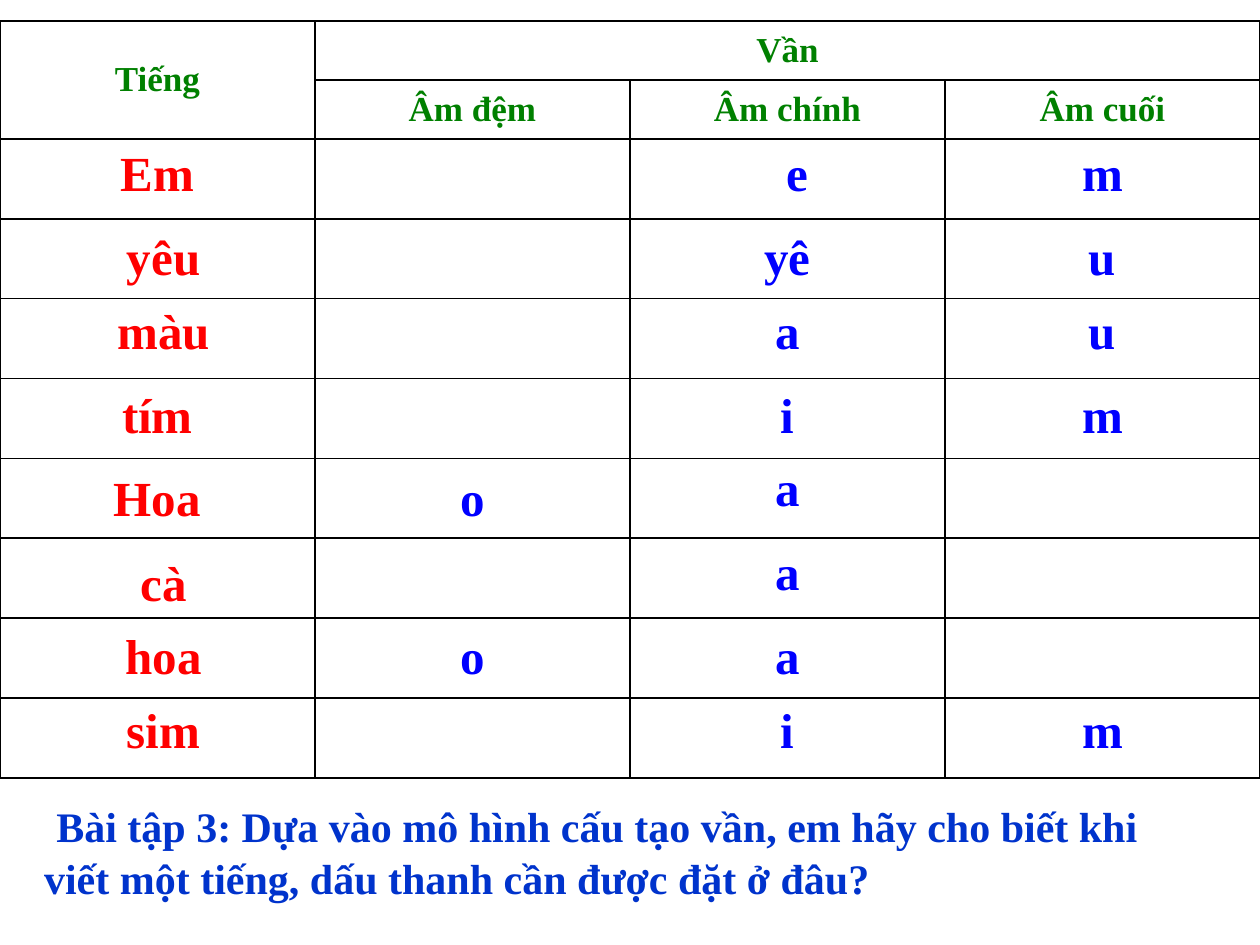
import pptx
import pptx.dml.color
import pptx.enum.text
import pptx.oxml
import pptx.oxml.ns
import pptx.util
from pptx.util import Cm

FONT = "Times New Roman"
GREEN, RED, BLUE, NAVY, BLACK = "008000", "FF0000", "0000FF", "0033CC", "000000"
COLUMN_WIDTH = 6.35
TABLE_TOP = 0.42
HEADER_HEIGHT, ROW_HEIGHT = 1.19, 1.61
SYLLABLE_TOPS = (2.75, 4.45, 5.93, 7.62, 9.31, 11.01, 12.49, 13.97)
VOWEL_TOPS = (2.75, 4.45, 5.93, 7.62, 9.1, 10.8, 12.49, 13.97)
HEADINGS = {(0, 0): "Tiếng", (0, 1): "Vần", (1, 1): "Âm đệm",
            (1, 2): "Âm chính", (1, 3): "Âm cuối"}
SYLLABLES = (" Em ", " yêu", " màu", "tím", "Hoa", " cà", " hoa", " sim")
GLIDES = ("", "", "", "", "o", "", "o", "")
VOWELS = ("e", "yê", "a", "i", "a", "a", "a", "i")
ENDINGS = ("m", "u", "u", "m", "", "", "", "m")
QUESTION = ("Bài tập 3: Dựa vào mô hình cấu tạo vần, em hãy cho biết khi "
            "viết một tiếng, dấu thanh cần được đặt ở đâu?")


def color(value):
    """Return the colour for a hex string."""
    return pptx.dml.color.RGBColor.from_string(value)


def style_font(font, size, value):
    """Set the shared bold face with a size and a colour."""
    font.name = FONT
    font.size = pptx.util.Pt(size)
    font.bold = True
    font.color.rgb = color(value)


def format_cell(cell):
    """Clear the fill of a cell and draw thin black borders round it."""
    properties = cell._tc.get_or_add_tcPr()
    for side in ("lnL", "lnR", "lnT", "lnB"):
        properties.append(pptx.oxml.parse_xml(
            f'<a:{side} {pptx.oxml.ns.nsdecls("a")} w="12700"><a:solidFill>'
            f'<a:srgbClr val="{BLACK}"/></a:solidFill></a:{side}>'))
    cell.fill.background()


def add_rhyme_table(slide):
    """Add the empty grid with its merged heading cells."""
    height = 2 * HEADER_HEIGHT + len(SYLLABLES) * ROW_HEIGHT
    table = slide.shapes.add_table(
        len(SYLLABLES) + 2, 4, Cm(0), Cm(TABLE_TOP),
        Cm(4 * COLUMN_WIDTH), Cm(height)).table
    table.first_row = table.horz_banding = False
    for column in table.columns:
        column.width = Cm(COLUMN_WIDTH)
    for index, row in enumerate(table.rows):
        row.height = Cm(HEADER_HEIGHT if index < 2 else ROW_HEIGHT)
        for cell in row.cells:
            format_cell(cell)
    table.cell(0, 0).merge(table.cell(1, 0))
    table.cell(0, 1).merge(table.cell(0, 3))
    for position, text in HEADINGS.items():
        cell = table.cell(*position)
        cell.text = text
        cell.vertical_anchor = pptx.enum.text.MSO_ANCHOR.MIDDLE
        paragraph = cell.text_frame.paragraphs[0]
        paragraph.alignment = pptx.enum.text.PP_ALIGN.CENTER
        style_font(paragraph.font, 20, GREEN)


def add_text_box(slide, left, top, width, height, space_before):
    """Add a wrapping text box and return its paragraph."""
    frame = slide.shapes.add_textbox(
        Cm(left), Cm(top), Cm(width), Cm(height)).text_frame
    frame.word_wrap = True
    paragraph = frame.paragraphs[0]
    paragraph.space_before = pptx.util.Pt(space_before)
    return paragraph


def add_answers(slide, left, tops, answers, value):
    """Add one column of centred answers, skipping empty ones."""
    for top, answer in zip(tops, answers):
        if answer:
            paragraph = add_text_box(slide, left, top, COLUMN_WIDTH, 1.65, 3.6)
            paragraph.alignment = pptx.enum.text.PP_ALIGN.CENTER
            paragraph.add_run().text = answer
            style_font(paragraph.font, 28, value)


def add_question(slide):
    """Add the exercise question below the table."""
    paragraph = add_text_box(slide, 0.64, 15.88, 23.06, 2.49, 9)
    for text, size in ((" ", 28), (QUESTION, 24)):
        run = paragraph.add_run()
        run.text = text
        style_font(run.font, size, NAVY)


def main():
    """Build and save the slide."""
    presentation = pptx.Presentation()
    presentation.slide_width, presentation.slide_height = Cm(25.4), Cm(19.05)
    slide = presentation.slides.add_slide(presentation.slide_layouts[6])
    add_rhyme_table(slide)
    add_answers(slide, 0, SYLLABLE_TOPS, SYLLABLES, RED)
    add_answers(slide, COLUMN_WIDTH, SYLLABLE_TOPS, GLIDES, BLUE)
    add_answers(slide, 2 * COLUMN_WIDTH + 0.2, VOWEL_TOPS[:1], VOWELS[:1], BLUE)
    add_answers(slide, 2 * COLUMN_WIDTH, VOWEL_TOPS[1:], VOWELS[1:], BLUE)
    add_answers(slide, 3 * COLUMN_WIDTH, SYLLABLE_TOPS, ENDINGS, BLUE)
    add_question(slide)
    presentation.save("out.pptx")


if __name__ == "__main__":
    main()
